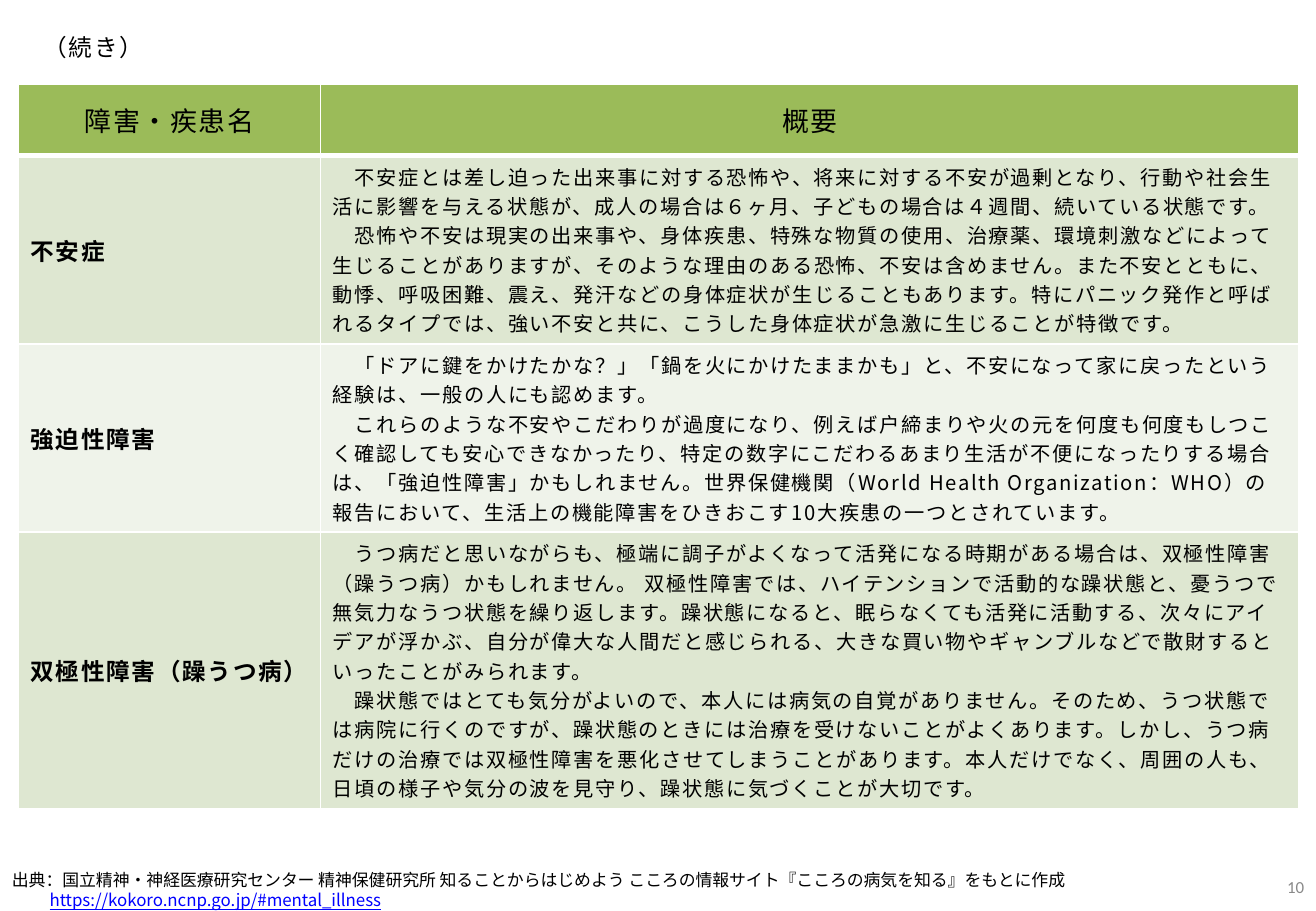
from dataclasses import dataclass

from lxml.etree import SubElement
from pptx import Presentation
from pptx.dml.color import RGBColor
from pptx.enum.text import MSO_ANCHOR as Anchor, PP_ALIGN as Align
from pptx.oxml import parse_xml
from pptx.oxml.ns import nsdecls, qn
from pptx.util import Inches, Pt


@dataclass(frozen=True)
class Theme:
    font: str = "Noto Sans CJK JP"
    number_font: str = "Calibri"
    text: str = "000000"
    link: str = "0000FF"
    muted: str = "898989"
    header: str = "9BBB59"
    bands: tuple = ("DEE7D1", "EFF3EA")
    border: str = "FFFFFF"
    header_size: int = 16
    name_size: int = 14
    body_size: int = 12
    small_size: int = 10
    spacing: int = 1


THEME = Theme()
COLUMN_WIDTHS = (2.49, 8.05)
ROW_HEIGHTS = (0.59, 1.55, 1.55, 2.27)
HEADERS = ("障害・疾患名", "概要")
DISORDERS = (
    ("不安症", (
        "　不安症とは差し迫った出来事に対する恐怖や、将来に対する不安が過剰となり、行動や社会生活に影響を"
        "与える状態が、成人の場合は６ヶ月、子どもの場合は４週間、続いている状態です。",
        "　恐怖や不安は現実の出来事や、身体疾患、特殊な物質の使用、治療薬、環境刺激などによって生じることが"
        "ありますが、そのような理由のある恐怖、不安は含めません。また不安とともに、動悸、呼吸困難、震え、"
        "発汗などの身体症状が生じることもあります。特にパニック発作と呼ばれるタイプでは、強い不安と共に、"
        "こうした身体症状が急激に生じることが特徴です。",
    )),
    ("強迫性障害", (
        "　「ドアに鍵をかけたかな？」「鍋を火にかけたままかも」と、不安になって家に戻ったという経験は、"
        "一般の人にも認めます。",
        "　これらのような不安やこだわりが過度になり、例えば戸締まりや火の元を何度も何度もしつこく確認しても"
        "安心できなかったり、特定の数字にこだわるあまり生活が不便になったりする場合は、「強迫性障害」かも"
        "しれません。世界保健機関（World Health Organization：WHO）の報告において、生活上の機能障害を"
        "ひきおこす10大疾患の一つとされています。",
    )),
    ("双極性障害（躁うつ病）", (
        "　うつ病だと思いながらも、極端に調子がよくなって活発になる時期がある場合は、双極性障害（躁うつ病）"
        "かもしれません。 双極性障害では、ハイテンションで活動的な躁状態と、憂うつで無気力なうつ状態を"
        "繰り返します。躁状態になると、眠らなくても活発に活動する、次々にアイデアが浮かぶ、自分が偉大な"
        "人間だと感じられる、大きな買い物やギャンブルなどで散財するといったことがみられます。",
        "　躁状態ではとても気分がよいので、本人には病気の自覚がありません。そのため、うつ状態では病院に"
        "行くのですが、躁状態のときには治療を受けないことがよくあります。しかし、うつ病だけの治療では"
        "双極性障害を悪化させてしまうことがあります。本人だけでなく、周囲の人も、日頃の様子や気分の波を"
        "見守り、躁状態に気づくことが大切です。",
    )),
)
SOURCE = ("出典：国立精神・神経医療研究センター 精神保健研究所 知ることからはじめよう "
          "こころの情報サイト『こころの病気を知る』をもとに作成")
SOURCE_URL = "https://kokoro.ncnp.go.jp/#mental_illness"


def write(text_frame, lines, size, color=THEME.text, font=THEME.font,
          align=Align.LEFT, bold=False, spacing=0):
    """Fill a text frame with one paragraph per line, all in one style."""
    text_frame.text = "\n".join(lines)
    for paragraph in text_frame.paragraphs:
        paragraph.alignment = align
        for run in paragraph.runs:
            run.font.size = Pt(size)
            run.font.bold = bold
            run.font.name = font
            run.font.color.rgb = RGBColor.from_string(color)
            properties = run.font._element
            SubElement(properties, qn("a:ea")).set("typeface", font)
            if spacing:
                properties.set("spc", str(spacing * 100))


def add_text(slide, box, lines, size, anchor=Anchor.MIDDLE, **style):
    text_box = slide.shapes.add_textbox(*map(Inches, box))
    text_frame = text_box.text_frame
    text_frame.word_wrap = True
    text_frame.vertical_anchor = anchor
    text_frame.margin_top = text_frame.margin_bottom = 0
    write(text_frame, lines, size, **style)
    return text_frame


def style_cell(cell, fill, bottom_width=1):
    cell.vertical_anchor = Anchor.MIDDLE
    cell.fill.solid()
    cell.fill.fore_color.rgb = RGBColor.from_string(fill)
    widths = {"lnL": 1, "lnR": 1, "lnT": 1, "lnB": bottom_width}
    for position, (side, width) in enumerate(widths.items()):
        line = parse_xml(
            f'<a:{side} {nsdecls("a")} w="{Pt(width)}"><a:solidFill>'
            f'<a:srgbClr val="{THEME.border}"/></a:solidFill></a:{side}>')
        cell._tc.get_or_add_tcPr().insert(position, line)


def add_disorder_table(slide, left, top):
    table = slide.shapes.add_table(
        len(ROW_HEIGHTS), len(COLUMN_WIDTHS), Inches(left), Inches(top),
        Inches(sum(COLUMN_WIDTHS)), Inches(sum(ROW_HEIGHTS))).table
    for column, width in zip(table.columns, COLUMN_WIDTHS):
        column.width = Inches(width)
    for row, height in zip(table.rows, ROW_HEIGHTS):
        row.height = Inches(height)

    for cell, header in zip(table.rows[0].cells, HEADERS):
        write(cell.text_frame, [header], THEME.header_size,
              align=Align.CENTER, spacing=THEME.spacing)
        style_cell(cell, THEME.header, bottom_width=3)
    for index, (name, summary) in enumerate(DISORDERS):
        name_cell, summary_cell = table.rows[index + 1].cells
        write(name_cell.text_frame, [name], THEME.name_size,
              bold=True, spacing=THEME.spacing)
        write(summary_cell.text_frame, summary, THEME.body_size,
              spacing=THEME.spacing)
        for cell in (name_cell, summary_cell):
            style_cell(cell, THEME.bands[index % 2])


def add_source(slide, box):
    text_frame = add_text(slide, box, [SOURCE, SOURCE_URL], THEME.small_size)
    url = text_frame.paragraphs[1]
    url._p.get_or_add_pPr().set("marL", str(Inches(0.31)))
    url.runs[0].font.underline = True
    url.runs[0].font.color.rgb = RGBColor.from_string(THEME.link)


def main():
    presentation = Presentation()
    presentation.slide_width = Inches(10.83)
    presentation.slide_height = Inches(7.5)
    slide = presentation.slides.add_slide(presentation.slide_layouts[6])
    add_disorder_table(slide, 0.15, 0.69)
    add_text(slide, (10.32, 7.1, 0.51, 0.4), ["10"], THEME.small_size,
             color=THEME.muted, font=THEME.number_font, align=Align.RIGHT)
    add_text(slide, (0.26, 0.27, 1.1, 0.24), ["（続き）"], THEME.name_size,
             anchor=Anchor.TOP, spacing=THEME.spacing)
    add_source(slide, (0, 7.15, 9.84, 0.35))
    presentation.save("out.pptx")


if __name__ == "__main__":
    main()
